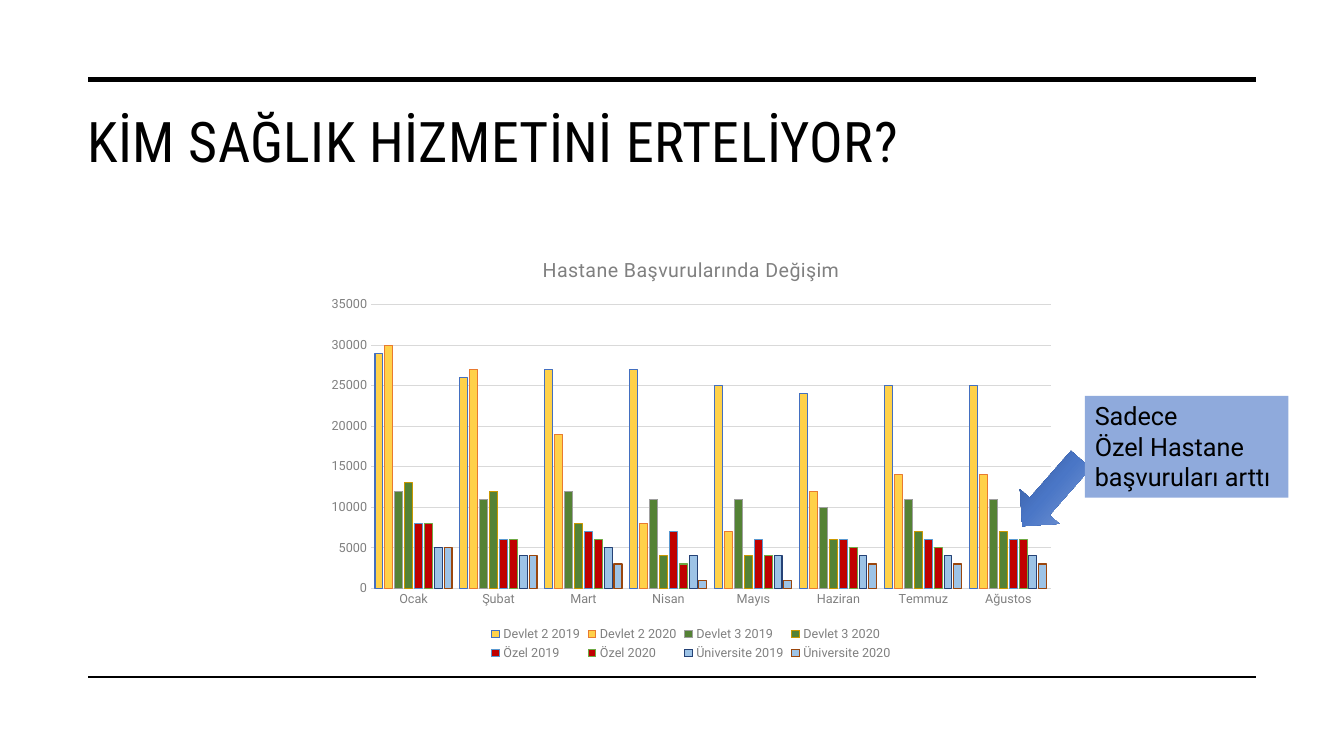
from dataclasses import dataclass

from lxml.etree import SubElement
from pptx import Presentation
from pptx.chart.data import CategoryChartData
from pptx.dml.color import RGBColor
from pptx.enum.chart import XL_CHART_TYPE as ChartType, XL_LEGEND_POSITION as LegendPosition
from pptx.enum.chart import XL_TICK_MARK as TickMark
from pptx.enum.shapes import MSO_CONNECTOR as Connector, MSO_SHAPE as Shape
from pptx.enum.text import MSO_ANCHOR as Anchor, PP_ALIGN as Align
from pptx.oxml.ns import qn
from pptx.util import Inches, Pt


@dataclass(frozen=True)
class Theme:
    heading_font: str = "Roboto Condensed"
    body_font: str = "Roboto"
    ink: str = "000000"
    muted: str = "808080"
    grid: str = "D9D9D9"
    callout: str = "8FAADC"
    arrow: tuple = ((0, "2A4B86"), (48, "4A76C6"), (100, "8FAADC"))
    heading_size: float = 40
    callout_size: float = 18
    chart_title_size: float = 14
    chart_size: float = 10
    label_size: float = 9
    hairline: float = 0.75


THEME = Theme()
WIDTH, HEIGHT = Inches(13.33), Inches(7.5)
COLUMN, ROW = WIDTH / 100, HEIGHT / 100
LEFT_EDGE, RIGHT_EDGE = 6.58, 93.47

MONTHS = ("Ocak", "Şubat", "Mart", "Nisan", "Mayıs", "Haziran", "Temmuz", "Ağustos")
VISITS = (
    ("Devlet 2 2019", "FFD149", "436FC0", (29000, 26000, 27000, 27000, 25000, 24000, 25000, 25000)),
    ("Devlet 2 2020", "FFD149", "E87A30", (30000, 27000, 19000, 8000, 7000, 12000, 14000, 14000)),
    ("Devlet 3 2019", "548235", "9F9F9F", (12000, 11000, 12000, 11000, 11000, 10000, 11000, 11000)),
    ("Devlet 3 2020", "548235", "CA9800", (13000, 12000, 8000, 4000, 4000, 6000, 7000, 7000)),
    ("Özel 2019", "C00000", "5998D0", (8000, 6000, 7000, 7000, 6000, 6000, 6000, 6000)),
    ("Özel 2020", "C00000", "6EA945", (8000, 6000, 6000, 3000, 4000, 5000, 5000, 6000)),
    ("Üniversite 2019", "9DC3E6", "254276", (5000, 4000, 5000, 4000, 4000, 4000, 4000, 4000)),
    ("Üniversite 2020", "9DC3E6", "9A460D", (5000, 4000, 3000, 1000, 1000, 3000, 3000, 3000)),
)


def place(left, top, width, height):
    return round(left * COLUMN), round(top * ROW), round(width * COLUMN), round(height * ROW)


def style_font(font, size, color, name=THEME.body_font):
    font.size, font.name, font.bold = Pt(size), name, False
    font.color.rgb = RGBColor.from_string(color)


def style_line(line, color, width=THEME.hairline):
    line.color.rgb = RGBColor.from_string(color)
    line.width = Pt(width)


def paint(fill, color):
    fill.solid()
    fill.fore_color.rgb = RGBColor.from_string(color)


def write(text_frame, text, size, color, name=THEME.body_font, spacing=0):
    text_frame.text = text
    for paragraph in text_frame.paragraphs:
        for run in paragraph.runs:
            style_font(run.font, size, color, name)
            if spacing:
                run._r.get_or_add_rPr().set("spc", str(spacing))


def add_rule(slide, row, width):
    left, top, length, _ = place(LEFT_EDGE, row, RIGHT_EDGE - LEFT_EDGE, 0)
    rule = slide.shapes.add_connector(Connector.STRAIGHT, left, top, left + length, top)
    style_line(rule.line, THEME.ink, width)
    SubElement(rule._element.spPr, qn("a:effectLst"))


def add_heading(slide, text, box):
    text_frame = slide.shapes.add_textbox(*place(*box)).text_frame
    text_frame.word_wrap = True
    write(text_frame, text, THEME.heading_size, THEME.ink, THEME.heading_font, 30)


def add_plain_shape(slide, kind, box):
    shape = slide.shapes.add_shape(kind, *place(*box))
    shape.shadow.inherit = False
    shape.line.fill.background()
    return shape


def add_arrow(slide, box, rotation):
    arrow = add_plain_shape(slide, Shape.RIGHT_ARROW, box)
    arrow.rotation = rotation
    arrow.fill.gradient()
    arrow.fill.gradient_angle = 90
    stops = arrow._element.spPr.find(qn("a:gradFill")).find(qn("a:gsLst"))
    stops.clear()
    for percent, color in THEME.arrow:
        stop = SubElement(stops, qn("a:gs"), pos=str(percent * 1000))
        SubElement(stop, qn("a:srgbClr"), val=color)


def add_callout(slide, text, box):
    callout = add_plain_shape(slide, Shape.RECTANGLE, box)
    paint(callout.fill, THEME.callout)
    text_frame = callout.text_frame
    text_frame.word_wrap = True
    text_frame.vertical_anchor = Anchor.TOP
    write(text_frame, text, THEME.callout_size, THEME.ink)
    for paragraph in text_frame.paragraphs:
        paragraph.alignment = Align.LEFT


def style_axes(chart):
    for axis in (chart.category_axis, chart.value_axis):
        axis.major_tick_mark = axis.minor_tick_mark = TickMark.NONE
        style_font(axis.tick_labels.font, THEME.label_size, THEME.muted)
    style_line(chart.category_axis.format.line, THEME.grid)
    value_axis = chart.value_axis
    value_axis.format.line.fill.background()
    value_axis.minimum_scale, value_axis.maximum_scale, value_axis.major_unit = 0, 35000, 5000
    style_line(value_axis.major_gridlines.format.line, THEME.grid)


def add_visits_chart(slide, title, box):
    data = CategoryChartData()
    data.categories = MONTHS
    for name, _, _, values in VISITS:
        data.add_series(name, values)
    chart = slide.shapes.add_chart(ChartType.COLUMN_CLUSTERED, *place(*box), data).chart
    style_font(chart.font, THEME.chart_size, THEME.ink)
    chart.has_title = True
    write(chart.chart_title.text_frame, title, THEME.chart_title_size, THEME.muted, spacing=20)
    chart.has_legend = True
    chart.legend.position = LegendPosition.BOTTOM
    chart.legend.include_in_layout = False
    style_font(chart.legend.font, THEME.label_size, THEME.muted)
    style_axes(chart)
    plot = chart.plots[0]
    plot.gap_width, plot.overlap, plot.vary_by_categories = 100, -24, False
    for series, (_, color, outline, _) in zip(plot.series, VISITS):
        series.invert_if_negative = False
        paint(series.format.fill, color)
        style_line(series.format.line, outline)


def main():
    presentation = Presentation()
    presentation.slide_width, presentation.slide_height = WIDTH, HEIGHT
    slide = presentation.slides.add_slide(presentation.slide_layouts[6])
    add_rule(slide, 10.53, 3.5)
    add_rule(slide, 89.56, 1)
    add_heading(slide, "KİM SAĞLIK HİZMETİNİ ERTELİYOR?", (5.78, 13.47, 87.7, 20))
    add_visits_chart(slide, "Hastane Başvurularında Değişim", (23.56, 31.6, 55.74, 56.27))
    add_arrow(slide, (74.94, 61.73, 6.6, 6.93), 131.3)
    add_callout(slide, "Sadece\nÖzel Hastane\nbaşvuruları arttı", (80.72, 52.36, 15.15, 13.47))
    presentation.save("out.pptx")


if __name__ == "__main__":
    main()
